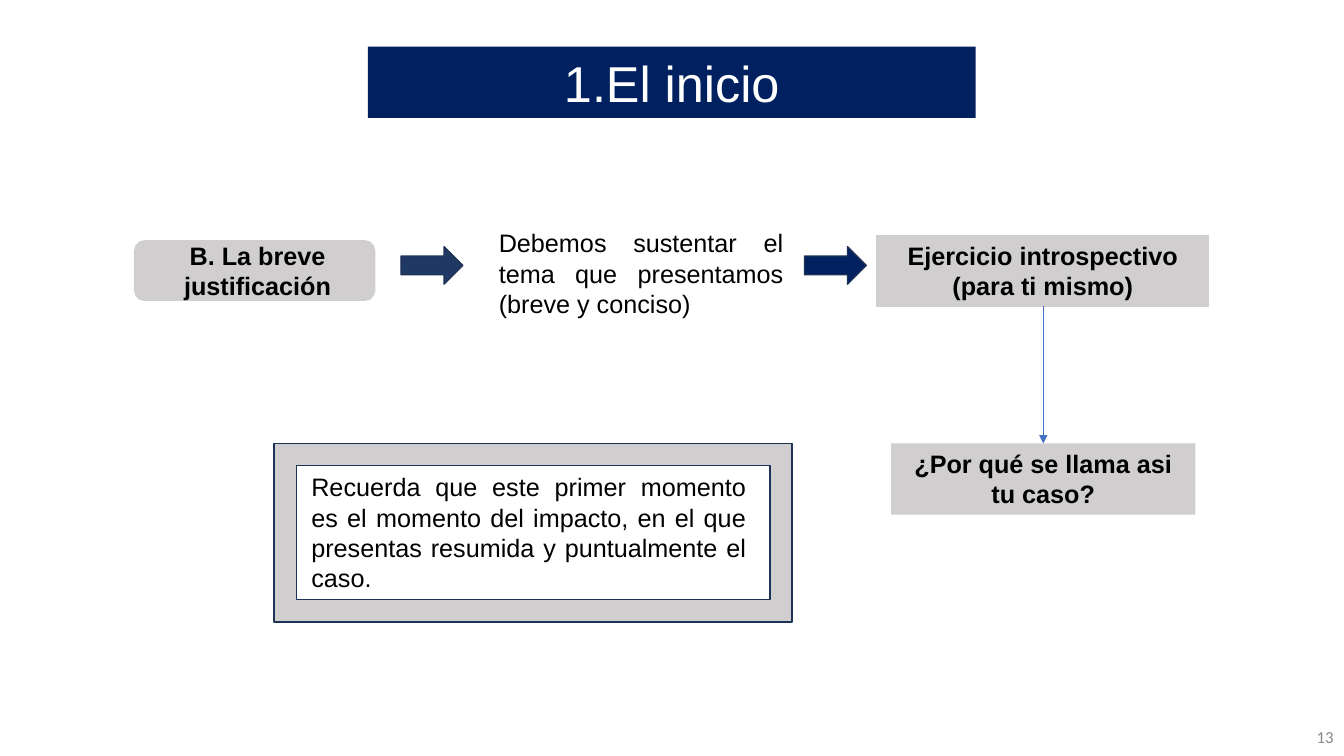
from dataclasses import dataclass

from lxml import etree
from pptx import Presentation
from pptx.dml.color import RGBColor
from pptx.enum.shapes import MSO_CONNECTOR, MSO_SHAPE
from pptx.enum.text import MSO_ANCHOR, MSO_AUTO_SIZE, PP_ALIGN
from pptx.oxml.ns import qn
from pptx.shapes.autoshape import Shape
from pptx.slide import Slide
from pptx.util import Pt

RECT = MSO_SHAPE.RECTANGLE
ROUNDED = MSO_SHAPE.ROUNDED_RECTANGLE
ARROW = MSO_SHAPE.RIGHT_ARROW
FRAME = MSO_SHAPE.FRAME
STRAIGHT = MSO_CONNECTOR.STRAIGHT
CENTER, JUSTIFY, RIGHT = PP_ALIGN.CENTER, PP_ALIGN.JUSTIFY, PP_ALIGN.RIGHT
TOP, MIDDLE = MSO_ANCHOR.TOP, MSO_ANCHOR.MIDDLE
FIT_SHAPE, NO_FIT = MSO_AUTO_SIZE.SHAPE_TO_FIT_TEXT, MSO_AUTO_SIZE.NONE

NAVY, DARK_BLUE, OUTLINE = "002060", "203864", "1E3256"
GRAY, BLUE, BLACK, WHITE = "D0CECE", "4472C4", "000000", "FFFFFF"
PAGE_GRAY = "888888"


@dataclass(frozen=True)
class Box:
    left: float
    top: float
    width: float
    height: float


@dataclass(frozen=True)
class Block:
    box: Box
    kind: MSO_SHAPE
    fill: str
    line: str = ""
    line_width: float = 1


@dataclass(frozen=True)
class Passage:
    box: Box
    text: str
    align: PP_ALIGN
    bold: bool = False


def color(value: str) -> RGBColor:
    return RGBColor.from_string(value)


def write(shape: Shape, text: str, *, align: PP_ALIGN = CENTER, size: float = 18,
          font: str = "Arial", ink: str = BLACK, bold: bool = False,
          anchor: MSO_ANCHOR = TOP, fit: MSO_AUTO_SIZE = FIT_SHAPE) -> None:
    frame = shape.text_frame
    frame.text = text
    frame.word_wrap = True
    frame.auto_size = fit
    frame.vertical_anchor = anchor
    for paragraph in frame.paragraphs:
        paragraph.alignment = align
        for run in paragraph.runs:
            run.font.name = font
            run.font.size = Pt(size)
            run.font.bold = bold
            run.font.color.rgb = color(ink)


def draw_block(slide: Slide, block: Block) -> Shape:
    box = block.box
    shape = slide.shapes.add_shape(
        block.kind, Pt(box.left), Pt(box.top), Pt(box.width), Pt(box.height))
    shape.shadow.inherit = False
    shape.fill.solid()
    shape.fill.fore_color.rgb = color(block.fill)
    if block.line:
        shape.line.color.rgb = color(block.line)
        shape.line.width = Pt(block.line_width)
    else:
        shape.line.fill.background()
    return shape


def add_text_area(slide: Slide, box: Box) -> Shape:
    return slide.shapes.add_textbox(
        Pt(box.left), Pt(box.top), Pt(box.width), Pt(box.height))


def draw_passage(slide: Slide, passage: Passage) -> None:
    write(add_text_area(slide, passage.box), passage.text,
          align=passage.align, bold=passage.bold)


def draw_down_arrow(slide: Slide, x: float, top: float, bottom: float) -> None:
    arrow = slide.shapes.add_connector(STRAIGHT, Pt(x), Pt(top), Pt(x), Pt(bottom))
    arrow.line.color.rgb = color(BLUE)
    arrow.line.width = Pt(0.5)
    etree.SubElement(arrow.line._get_or_add_ln(), qn("a:tailEnd"), type="triangle")
    etree.SubElement(arrow._element.spPr, qn("a:effectLst"))


TITLE = Block(Box(262.8, 33.4, 434.2, 50.9), RECT, NAVY)
TOPIC = Block(Box(96.2, 172, 171.4, 42.5), ROUNDED, GRAY, GRAY)
EXERCISE = Block(Box(626.4, 168, 236.9, 50.9), RECT, GRAY, GRAY, 0.75)
QUESTION = Block(Box(636.5, 316.8, 217.4, 50.9), RECT, GRAY)
REMINDER_FRAME = Block(Box(195.8, 316.8, 370.1, 127.4), FRAME, GRAY, OUTLINE)
STEP_ARROWS = [Block(Box(left, 176.2, 44.2, 26.8), ARROW, fill, OUTLINE)
               for left, fill in ((286.4, DARK_BLUE), (574.6, NAVY))]

TOPIC_NAME = Passage(Box(92.9, 168, 182.2, 50.9), "B. La breve justificación",
                     CENTER, True)
SUPPORT = Passage(Box(349.2, 159.1, 217.4, 72.7),
                  "Debemos sustentar el tema que presentamos (breve y conciso)",
                  JUSTIFY)
REMINDER = Passage(Box(215.3, 333.4, 324.7, 94.3),
                   "Recuerda que este primer momento es el momento del impacto, "
                   "en el que presentas resumida y puntualmente el caso.", JUSTIFY)
PAGE_NUMBER = Box(743.8, 512, 216, 28)


def main() -> None:
    deck = Presentation()
    deck.slide_width, deck.slide_height = Pt(960), Pt(540)
    slide = deck.slides.add_slide(deck.slide_layouts[6])

    write(draw_block(slide, TITLE), "1.El inicio", size=36, ink=WHITE)
    draw_block(slide, TOPIC)
    draw_passage(slide, TOPIC_NAME)
    draw_passage(slide, SUPPORT)
    write(draw_block(slide, EXERCISE), "Ejercicio introspectivo\n(para ti mismo)",
          bold=True)
    write(draw_block(slide, QUESTION), "¿Por qué se llama asi tu caso?", bold=True)
    draw_down_arrow(slide, QUESTION.box.left + QUESTION.box.width / 2,
                    EXERCISE.box.top + EXERCISE.box.height, QUESTION.box.top)
    for step_arrow in STEP_ARROWS:
        draw_block(slide, step_arrow)
    write(add_text_area(slide, PAGE_NUMBER), "13", align=RIGHT, size=12,
          font="Calibri", ink=PAGE_GRAY, anchor=MIDDLE, fit=NO_FIT)
    draw_passage(slide, REMINDER)
    draw_block(slide, REMINDER_FRAME)

    deck.save("out.pptx")


if __name__ == "__main__":
    main()
